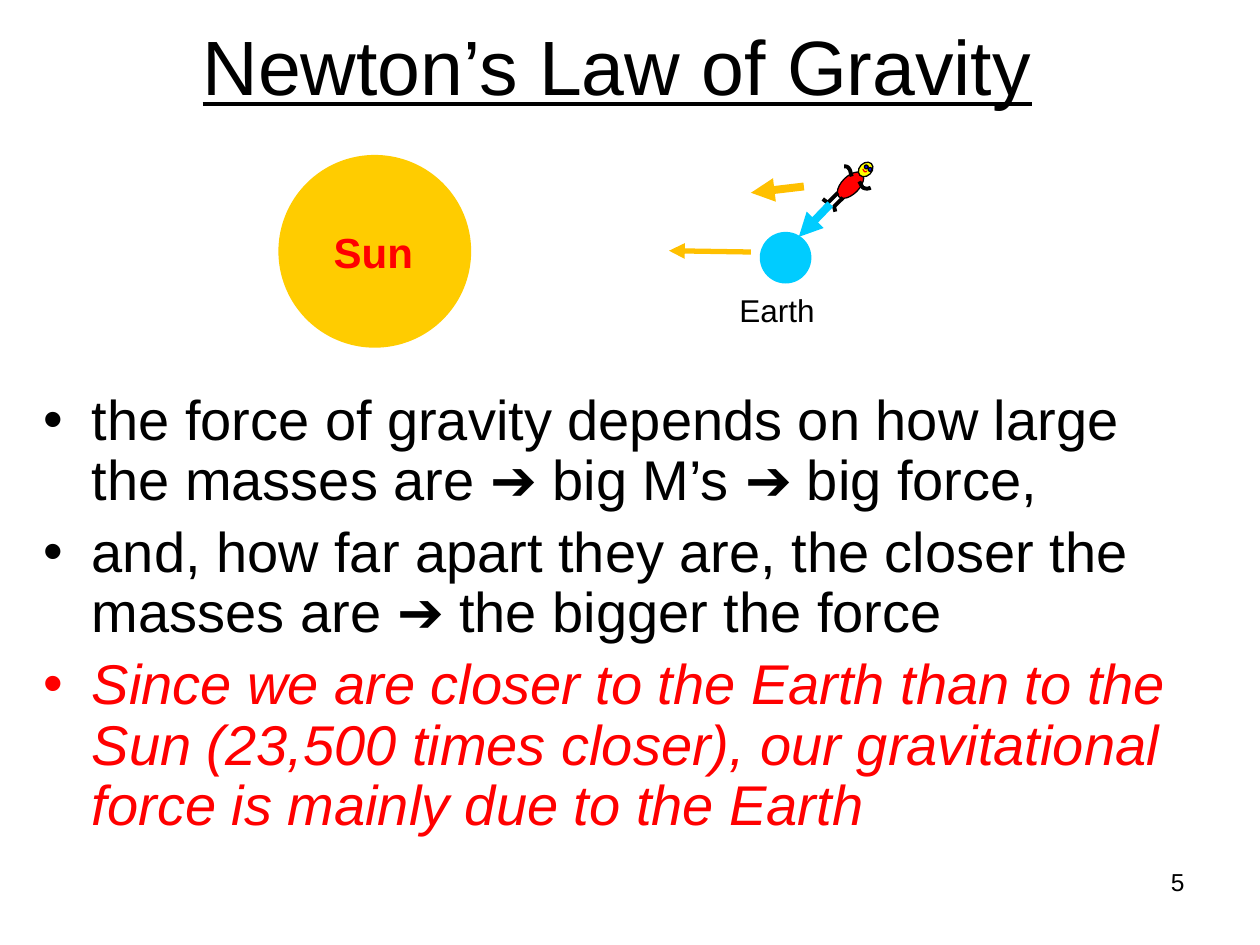
from collections import namedtuple
from dataclasses import dataclass

from lxml.etree import SubElement
from pptx import Presentation
from pptx.dml.color import RGBColor
from pptx.enum.shapes import MSO_CONNECTOR as Connector, MSO_SHAPE as Shape
from pptx.enum.text import MSO_ANCHOR as Anchor, MSO_AUTO_SIZE as AutoSize, PP_ALIGN as Align
from pptx.oxml.ns import qn
from pptx.util import Pt

PX = 9144  # EMU per px, 100 px to the inch
Box = namedtuple("Box", "x y w h")


@dataclass(frozen=True)
class Theme:
    font: str = "Arial"
    ink: str = "000000"
    accent: str = "FF0000"
    sun: str = "FFCC00"
    sun_pull: str = "FFC000"
    earth: str = "00CCFF"
    face: str = "FFFF00"
    eye: str = "0000FF"
    title_size: int = 44
    body_size: int = 32
    sun_size: int = 24
    earth_size: int = 18
    number_size: int = 14
    outline: float = 0.75
    limb: float = 2.25


THEME = Theme()


def rgb(color):
    return RGBColor.from_string(color)


def within(box, x, y, w, h):
    return Box(box.x + x, box.y + y, w, h)


# Shared builders
def add_run(paragraph, text, size, color=THEME.ink, bold=None, italic=None, underline=None):
    run = paragraph.add_run()
    run.text = text
    font = run.font
    font.name, font.size, font.color.rgb = THEME.font, Pt(size), rgb(color)
    font.bold, font.italic, font.underline = bold, italic, underline


def add_frame(shapes, box, wrap=True):
    frame = shapes.add_textbox(*(v * PX for v in box)).text_frame
    frame.word_wrap = wrap
    return frame


def add_label(shapes, box, text, size, **style):
    frame = add_frame(shapes, box, wrap=False)
    frame.auto_size = AutoSize.SHAPE_TO_FIT_TEXT
    add_run(frame.paragraphs[0], text, size, **style)


def add_ellipse(shapes, box, fill, outline=None, rotation=0):
    ellipse = shapes.add_shape(Shape.OVAL, *(v * PX for v in box))
    ellipse.shadow.inherit = False
    ellipse.rotation = rotation
    ellipse.fill.solid()
    ellipse.fill.fore_color.rgb = rgb(fill)
    if outline:
        ellipse.line.color.rgb = rgb(THEME.ink)
        ellipse.line.width = Pt(outline)
    else:
        ellipse.line.fill.background()


def add_stroke(shapes, box, points, color, width):
    (x, y), *rest = [((box.x + px) * PX, (box.y + py) * PX) for px, py in points]
    builder = shapes.build_freeform(round(x), round(y))
    builder.add_line_segments([(round(a), round(b)) for a, b in rest], close=False)
    stroke = builder.convert_to_shape()
    stroke.shadow.inherit = False
    stroke.fill.background()
    stroke.line.color.rgb = rgb(color)
    stroke.line.width = Pt(width)


def curve(*knots, steps=6):
    """Sample a chain of cubic Béziers: a start, then three points per piece."""
    points = [knots[0]]
    for i in range(0, len(knots) - 1, 3):
        piece = knots[i:i + 4]
        for t in (n / steps for n in range(1, steps + 1)):
            weights = ((1 - t) ** 3, 3 * t * (1 - t) ** 2, 3 * t * t * (1 - t), t ** 3)
            points.append(tuple(sum(k * p[axis] for k, p in zip(weights, piece))
                                for axis in (0, 1)))
    return points


def add_arrow(shapes, box, start, end, color, width):
    ends = [(box.x + x, box.y + y) for x, y in (start, end)]
    arrow = shapes.add_connector(Connector.STRAIGHT, *(v * PX for p in ends for v in p))
    arrow.line.color.rgb = rgb(color)
    arrow.line.width = Pt(width)
    SubElement(arrow.line._get_or_add_ln(), qn("a:tailEnd"), type="triangle")
    SubElement(arrow._element.spPr, qn("a:effectLst"))


# Regions of the slide
def add_title(slide, box):
    frame = add_frame(slide.shapes, box)
    frame.vertical_anchor = Anchor.MIDDLE
    heading = frame.paragraphs[0]
    heading.alignment = Align.CENTER
    add_run(heading, "Newton’s Law of Gravity", THEME.title_size, underline=True)


def add_points(slide, box):
    frame = add_frame(slide.shapes, box)
    points = [
        ("the force of gravity depends on how large the masses are ➔ big M’s ➔ big force,", {}),
        ("and, how far apart they are, the closer the masses are ➔ the bigger the force", {}),
        ("Since we are closer to the Earth than to the Sun (23,500 times closer), "
         "our gravitational force is mainly due to the Earth",
         {"color": THEME.accent, "italic": True}),
    ]
    for i, (text, style) in enumerate(points):
        point = frame.add_paragraph() if i else frame.paragraphs[0]
        point.line_spacing = 0.9
        point.space_before = Pt(THEME.body_size * 0.2)
        props = point._p.get_or_add_pPr()
        props.set("marL", str(38 * PX))
        props.set("indent", str(-38 * PX))
        SubElement(props, qn("a:buFont"), typeface=THEME.font)
        SubElement(props, qn("a:buChar"), char="•")
        add_run(point, text, THEME.body_size, **style)


def add_person(slide, box):
    shapes = slide.shapes.add_group_shape().shapes
    # Torso, head and eyes
    for part, fill in [((18, 9, 14, 26), THEME.accent), ((32, 3, 10, 13), THEME.face),
                       ((36, 6, 3, 3), THEME.eye), ((39, 8, 3, 3), THEME.eye)]:
        add_ellipse(shapes, within(box, *part), fill, THEME.outline, rotation=45)
    # Mouth
    mouth = curve((35, 9), (35, 10), (36, 11), (36, 11), (37, 12), (37, 11), (38, 11))
    add_stroke(shapes, box, mouth, THEME.accent, THEME.outline)
    # Arms and legs
    limbs = [
        curve((26, 15), (25, 12), (25, 10), (24, 9), (23, 7), (21, 7), (20, 7)),
        curve((32, 19), (33, 21), (34, 23), (35, 24), (37, 25), (39, 25), (41, 24)),
        [(15, 28), (7, 36), (3, 33)],
        [(19, 32), (12, 39), (13, 43)],
    ]
    for limb in limbs:
        add_stroke(shapes, box, limb, THEME.ink, THEME.limb)


def add_sun(slide, box):
    shapes = slide.shapes.add_group_shape().shapes
    add_ellipse(shapes, box, THEME.sun)
    add_label(shapes, within(box, 34, 52, 83, 50), "Sun", THEME.sun_size,
              color=THEME.accent, bold=True)


def add_earth(slide, box):
    shapes = slide.shapes.add_group_shape().shapes
    add_ellipse(shapes, within(box, 26, 0, 41, 41), THEME.earth)
    add_label(shapes, within(box, 0, 42, 80, 40), "Earth", THEME.earth_size)


def add_forces(slide, box):
    for start, end, color, width in [
        ((128, 14), (103, 40), THEME.earth, 4.5),    # Earth on person
        ((107, 0), (65, 5), THEME.sun_pull, 4.5),    # Sun on person
        ((65, 52), (0, 51), THEME.sun_pull, 3),      # Sun on Earth
    ]:
        add_arrow(slide.shapes, box, start, end, color, width)


def add_page_number(slide, box):
    number = add_frame(slide.shapes, box).paragraphs[0]
    number.alignment = Align.RIGHT
    add_run(number, "5", THEME.number_size)


def main():
    deck = Presentation()
    deck.slide_width, deck.slide_height = 1000 * PX, 750 * PX
    slide = deck.slides.add_slide(deck.slide_layouts[6])
    add_title(slide, Box(40, 0, 900, 103))
    add_points(slide, Box(25, 306, 925, 374))
    add_person(slide, Box(650, 125, 42, 43))
    add_sun(slide, Box(221, 123, 153, 153))
    add_earth(slide, Box(577, 184, 80, 82))
    add_forces(slide, Box(531, 148, 128, 52))
    add_page_number(slide, Box(717, 683, 233, 52))
    deck.save("out.pptx")


if __name__ == "__main__":
    main()
